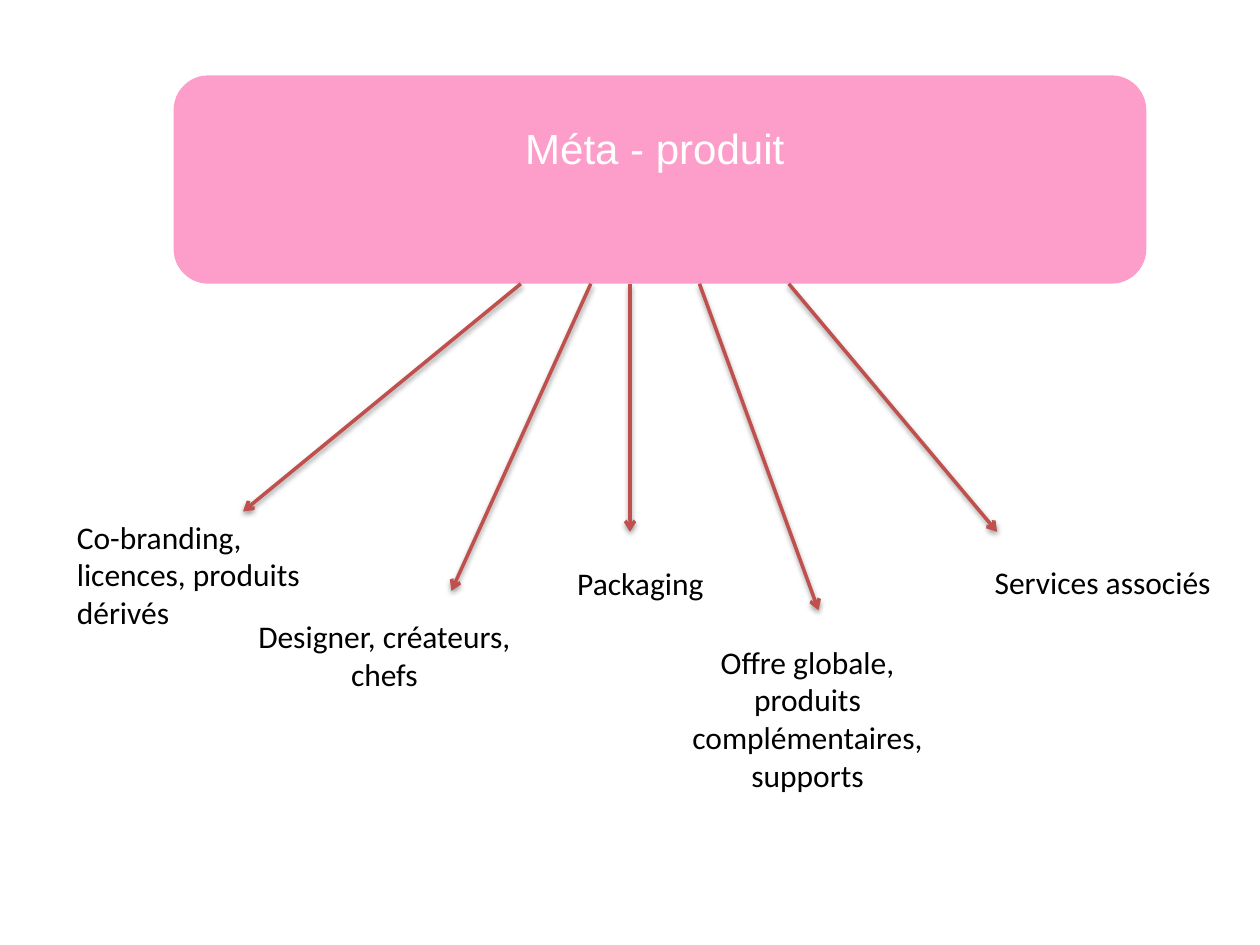
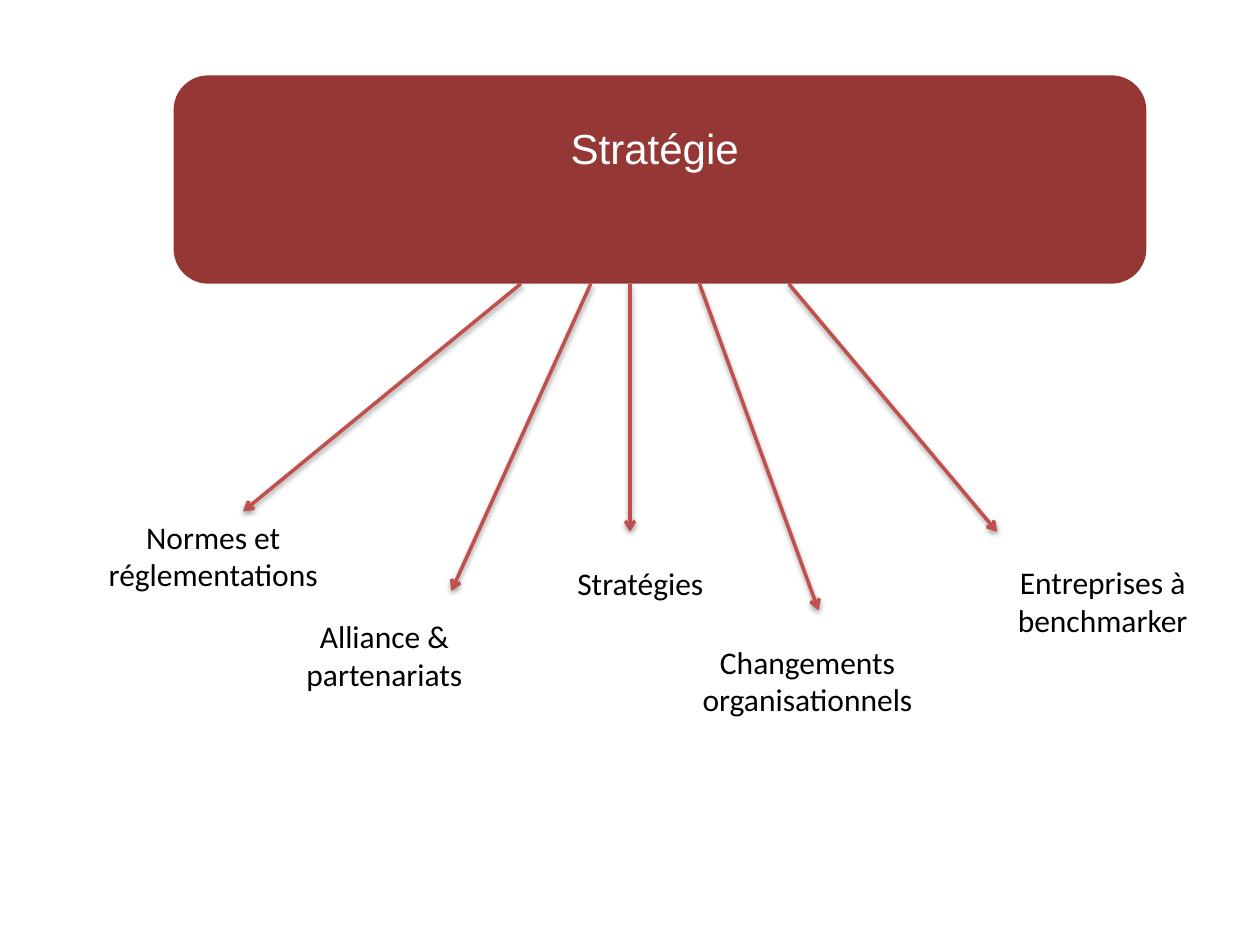
from lxml.etree import SubElement
from pptx import Presentation
from pptx.dml.color import RGBColor
from pptx.enum.shapes import MSO_CONNECTOR, MSO_SHAPE
from pptx.enum.text import MSO_ANCHOR, MSO_AUTO_SIZE, PP_ALIGN
from pptx.oxml.ns import qn
from pptx.util import Cm, Pt

COLOURS = {
    "product": "FC9EC9",
    "strategy": "953735",
    "arrow": "C0504D",
    "heading": "FFFFFF",
    "label": "000000",
    "shadow": "000000",
}

BAND_LEFT, BAND_TOP, BAND_WIDTH, BAND_HEIGHT = 3.5, 1.52, 19.61, 4.2
BAND_BOTTOM = BAND_TOP + BAND_HEIGHT
LABEL_WIDTH = 6
LINE_HEIGHT, LABEL_PADDING = 0.77, 0.25

BRANCHES = [
    {"start": 10.5, "end": (4.9, 10.31), "label": (1.3, 10.31)},
    {"start": 11.91, "end": (9.1, 11.91), "label": (4.75, 12.32)},
    {"start": 12.7, "end": (12.7, 10.72), "label": (9.91, 11.25)},
    {"start": 14.1, "end": (16.5, 12.3), "label": (13.28, 12.83)},
    {"start": 15.9, "end": (20.1, 10.72), "label": (19.23, 11.23)},
]

TOPICS = [
    ("Méta - produit", "product", [
        ("Co-branding, licences, produits dérivés", 3, PP_ALIGN.LEFT),
        ("Designer, créateurs, chefs", 2, PP_ALIGN.CENTER),
        ("Packaging", 1, PP_ALIGN.CENTER),
        ("Offre globale, produits complémentaires, supports", 4, PP_ALIGN.CENTER),
        ("Services associés", 1, PP_ALIGN.CENTER),
    ]),
    ("Stratégie", "strategy", [
        ("Normes et réglementations", 2, PP_ALIGN.CENTER),
        ("Alliance & partenariats", 2, PP_ALIGN.CENTER),
        ("Stratégies", 1, PP_ALIGN.CENTER),
        ("Changements organisationnels", 2, PP_ALIGN.CENTER),
        ("Entreprises à benchmarker", 2, PP_ALIGN.CENTER),
    ]),
]


def rgb(name):
    return RGBColor.from_string(COLOURS[name])


def write(shape, text, font_name, size, colour, alignment):
    frame = shape.text_frame
    frame.text = text
    frame.word_wrap = True
    frame.auto_size = MSO_AUTO_SIZE.SHAPE_TO_FIT_TEXT
    frame.vertical_anchor = MSO_ANCHOR.TOP
    paragraph = frame.paragraphs[0]
    paragraph.alignment = alignment
    font = paragraph.runs[0].font
    font.name = font_name
    font.size = Pt(size)
    font.color.rgb = rgb(colour)


def add_band(slide, colour):
    band = slide.shapes.add_shape(
        MSO_SHAPE.ROUNDED_RECTANGLE,
        Cm(BAND_LEFT), Cm(BAND_TOP), Cm(BAND_WIDTH), Cm(BAND_HEIGHT))
    band.shadow.inherit = False
    band.fill.solid()
    band.fill.fore_color.rgb = rgb(colour)
    band.line.fill.background()


def place_heading(slide, text):
    heading = slide.shapes.title
    slide.shapes.element.append(heading.element)
    heading.left, heading.top = Cm(5.3), Cm(2.34)
    heading.width, heading.height = Cm(15.8), Cm(1.27)
    write(heading, text, "Arial", 24, "heading", PP_ALIGN.CENTER)


def add_shadow(connector):
    effects = SubElement(connector.element.spPr, qn("a:effectLst"))
    shadow = SubElement(effects, qn("a:outerShdw"), blurRad=str(Pt(3.1)),
                        dist=str(Pt(1.6)), dir="5400000", rotWithShape="0")
    tint = SubElement(shadow, qn("a:srgbClr"), val=COLOURS["shadow"])
    SubElement(tint, qn("a:alpha"), val="38000")


def add_arrow(slide, start, end):
    arrow = slide.shapes.add_connector(
        MSO_CONNECTOR.STRAIGHT,
        Cm(start), Cm(BAND_BOTTOM), Cm(end[0]), Cm(end[1]))
    arrow.line.color.rgb = rgb("arrow")
    arrow.line.width = Pt(2)
    SubElement(arrow.element.spPr.find(qn("a:ln")), qn("a:tailEnd"), type="arrow")
    add_shadow(arrow)


def add_label(slide, position, text, lines, alignment):
    left, top = position
    label = slide.shapes.add_textbox(
        Cm(left), Cm(top), Cm(LABEL_WIDTH), Cm(LABEL_PADDING + lines * LINE_HEIGHT))
    write(label, text, "Calibri", 18, "label", alignment)


def add_topic(deck, heading, colour, labels):
    slide = deck.slides.add_slide(deck.slide_layouts[5])
    add_band(slide, colour)
    place_heading(slide, heading)
    for branch in BRANCHES:
        add_arrow(slide, branch["start"], branch["end"])
    for branch, label in zip(BRANCHES, labels):
        add_label(slide, branch["label"], *label)


def main():
    deck = Presentation()
    deck.slide_width, deck.slide_height = Cm(25.4), Cm(19.05)
    for topic in TOPICS:
        add_topic(deck, *topic)
    deck.save("out.pptx")


if __name__ == "__main__":
    main()
